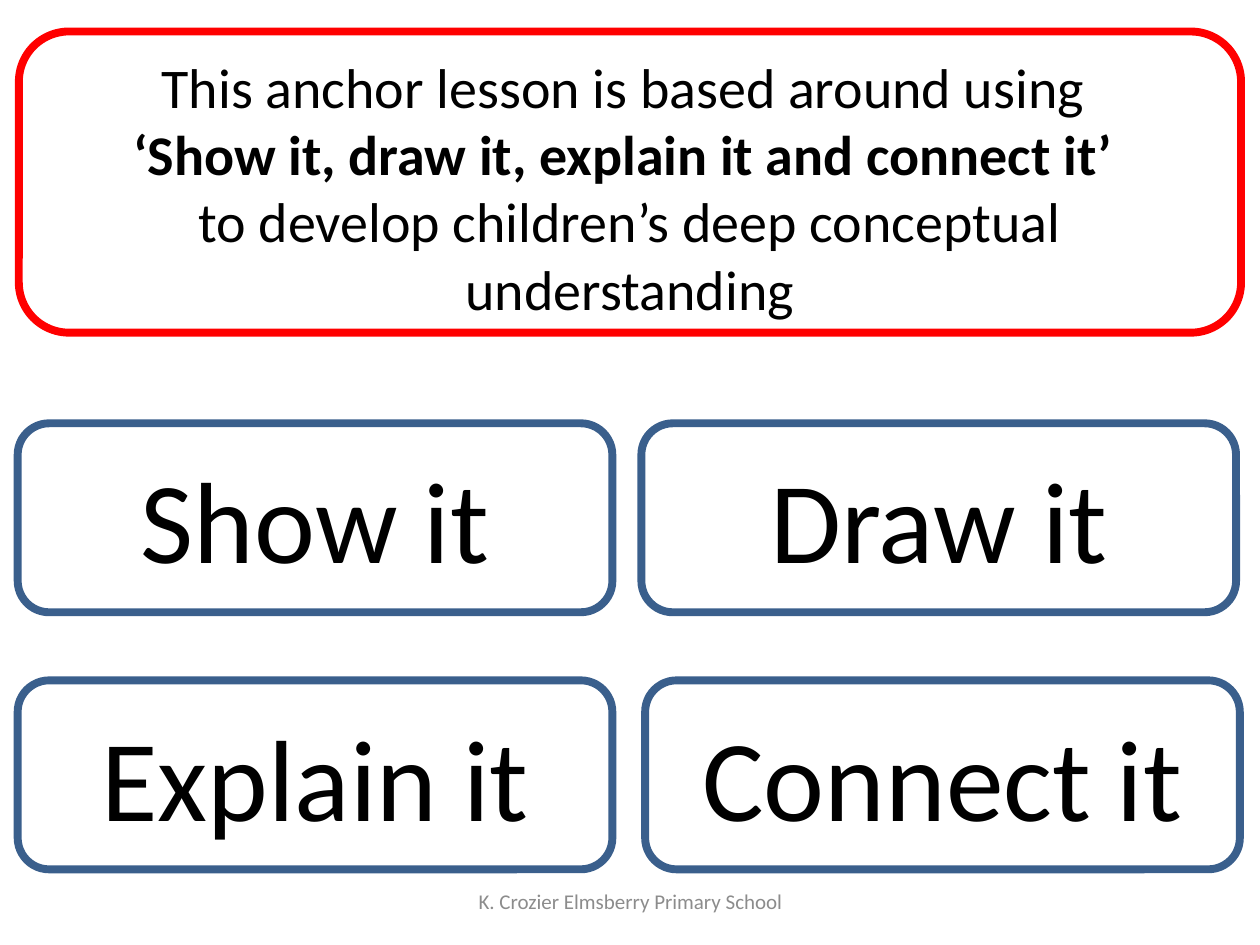
from pptx import Presentation
from pptx.dml.color import RGBColor
from pptx.enum.shapes import MSO_SHAPE
from pptx.enum.text import MSO_ANCHOR, PP_ALIGN
from pptx.util import Inches, Pt

INTRO = [  # text, bold
    ("This anchor lesson is based around using ", False),
    ("‘Show it, draw it, explain it and connect it’ ", True),
    ("to develop children’s deep conceptual understanding", False),
]
STEPS = [  # text, left edge; two cards to a row
    [("Show it", 0.14), ("Draw it", 5.09)],
    [("Explain it", 0.14), ("Connect it", 5.12)],
]
FOOTER = "K. Crozier Elmsberry Primary School"

THEME = dict(
    font="Calibri", text="000000", muted="8C8C8C", intro_line="FF0000", card_line="3A5F8C",
    intro_size=32, card_size=66, footer_size=12, line_width=4.5,
)
CARD_W, CARD_H = 4.72, 1.5
CARD_TOP, ROW_STEP = 3.36, 2.04


def add_text(shape, lines, size, color, anchor=MSO_ANCHOR.MIDDLE):
    tf = shape.text_frame
    tf.word_wrap = True
    tf.vertical_anchor = anchor
    tf.text = "\n".join(text for text, _ in lines)
    for p, (_, bold) in zip(tf.paragraphs, lines):
        p.alignment = PP_ALIGN.CENTER
        for r in p.runs:
            r.font.name = THEME["font"]
            r.font.size = Pt(size)
            r.font.bold = bold
            r.font.color.rgb = RGBColor.from_string(color)


def add_frame(s, box, line_color):
    """Add an unfilled rounded rectangle with a thick outline."""
    sp = s.shapes.add_shape(MSO_SHAPE.ROUNDED_RECTANGLE, *map(Inches, box))
    sp.shadow.inherit = False
    sp.fill.background()
    sp.line.color.rgb = RGBColor.from_string(line_color)
    sp.line.width = Pt(THEME["line_width"])
    return sp


def main():
    prs = Presentation()
    prs.slide_width, prs.slide_height = Inches(10), Inches(7.5)
    s = prs.slides.add_slide(prs.slide_layouts[6])

    for row, cards in enumerate(STEPS):
        for text, left in cards:
            box = (left, CARD_TOP + row * ROW_STEP, CARD_W, CARD_H)
            card = add_frame(s, box, THEME["card_line"])
            add_text(card, [(text, False)], THEME["card_size"], THEME["text"])

    intro = add_frame(s, (0.15, 0.25, 9.7, 2.39), THEME["intro_line"])
    add_text(intro, INTRO, THEME["intro_size"], THEME["text"], MSO_ANCHOR.TOP)

    footer = s.shapes.add_textbox(*map(Inches, (3.42, 6.95, 3.17, 0.4)))
    add_text(footer, [(FOOTER, False)], THEME["footer_size"], THEME["muted"])

    prs.save("out.pptx")


if __name__ == "__main__":
    main()
